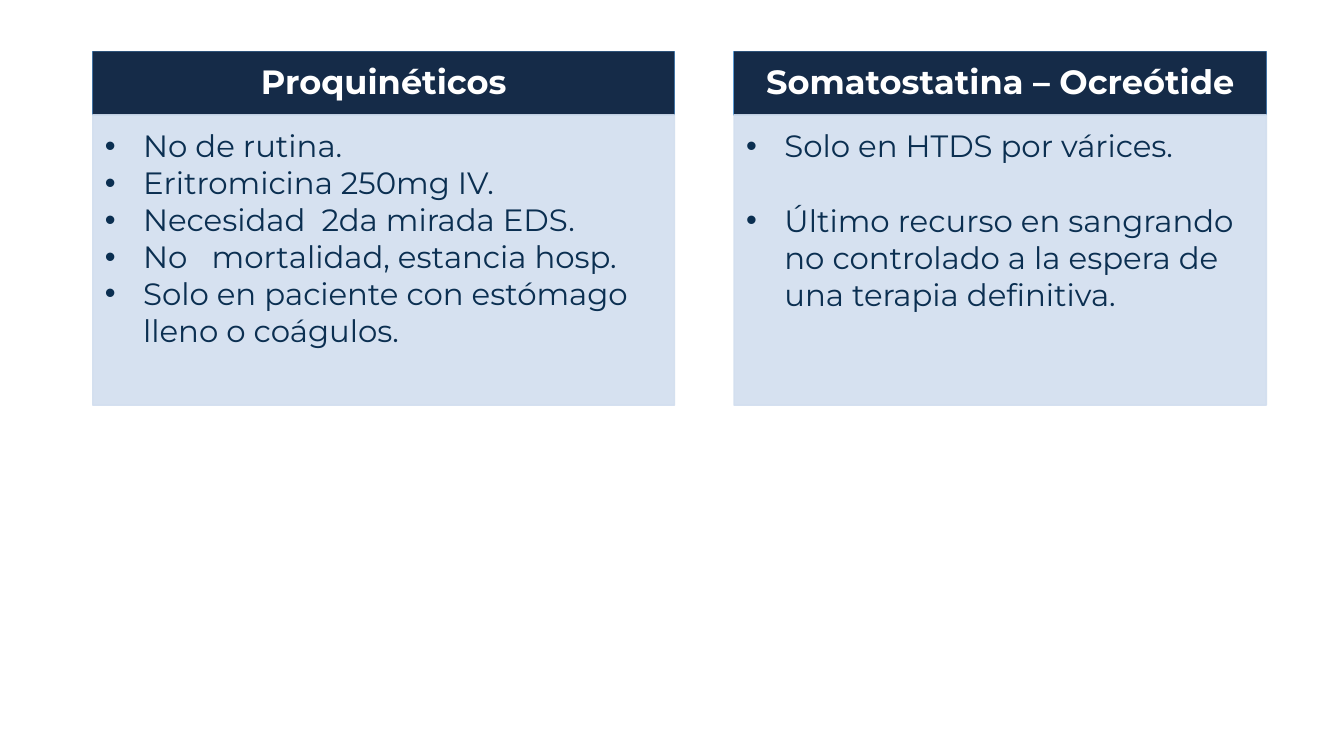
from dataclasses import dataclass

from lxml import etree
from pptx import Presentation
from pptx.dml.color import RGBColor
from pptx.enum import shapes, text
from pptx.oxml.ns import qn
from pptx.util import Inches, Pt


@dataclass(frozen=True)
class Theme:
    font: str = "Montserrat"
    navy: str = "152B48"
    edge: str = "5B9BD5"
    pale: str = "D2DEEF"
    ink: str = "0B2F51"
    white: str = "FFFFFF"
    title_size: int = 24
    body_size: int = 22
    pale_alpha: int = 90
    line_width: int = 1


THEME = Theme()

# Each bullet is a list of text pieces; a number between two pieces is the
# extra width, in points, of the space that joins them.
CARDS = [
    {
        "title": "Proquinéticos", "left": 0.92, "width": 5.77, "gap": 0,
        "bullets": [
            ["No de rutina."],
            ["Eritromicina 250mg IV."],
            ["Necesidad", 5.8, "2da mirada EDS."],
            ["No", 11.6, "mortalidad, estancia hosp."],
            ["Solo en paciente con estómago lleno o coágulos."],
        ],
    },
    {
        "title": "Somatostatina – Ocreótide", "left": 7.28, "width": 5.28, "gap": 26.8,
        "bullets": [
            ["Solo en HTDS por várices."],
            ["Último recurso en sangrando no controlado a la espera de "
             "una terapia definitiva."],
        ],
    },
]
TOP, HEADER_HEIGHT, BODY_HEIGHT = 0.51, 0.63, 2.88
HEADER_INSETS = (0.16, 0.09, 0.16, 0.09)
BODY_INSETS = (0.12, 0.12, 0.16, 0.17)
INDENT = 0.38


def add_rect(slide, box, fill, line=None, alpha=100):
    sp = slide.shapes.add_shape(shapes.MSO_SHAPE.RECTANGLE, *map(Inches, box))
    sp.shadow.inherit = False
    sp.fill.solid()
    sp.fill.fore_color.rgb = RGBColor.from_string(fill)
    if line:
        sp.line.color.rgb = RGBColor.from_string(line)
        sp.line.width = Pt(THEME.line_width)
    else:
        sp.line.fill.background()
    if alpha < 100:
        for color in sp._element.spPr.iter(qn("a:srgbClr")):
            etree.SubElement(color, qn("a:alpha"), val=str(alpha * 1000))
    return sp


def prepare_frame(sp, insets, anchor):
    tf = sp.text_frame
    tf.word_wrap = True
    tf.vertical_anchor = anchor
    tf.margin_left, tf.margin_top, tf.margin_right, tf.margin_bottom = map(Inches, insets)
    return tf


def add_run(p, words, size, color, bold=False):
    r = p.add_run()
    r.text = words
    r.font.name = THEME.font
    r.font.size = Pt(size)
    r.font.bold = bold
    r.font.color.rgb = RGBColor.from_string(color)
    return r


def set_bullet(p):
    pPr = p._p.get_or_add_pPr()
    pPr.set("marL", str(Inches(INDENT)))
    pPr.set("indent", str(-Inches(INDENT)))
    etree.SubElement(pPr, qn("a:buFont"), typeface="Arial")
    etree.SubElement(pPr, qn("a:buChar"), char="•")


def add_header(slide, card):
    box = (card["left"], TOP, card["width"], HEADER_HEIGHT)
    add_rect(slide, box, THEME.navy, THEME.edge)
    label = add_rect(slide, box, THEME.navy)
    p = prepare_frame(label, HEADER_INSETS, text.MSO_ANCHOR.MIDDLE).paragraphs[0]
    p.alignment = text.PP_ALIGN.CENTER
    p.line_spacing = 0.9
    add_run(p, card["title"], THEME.title_size, THEME.white, bold=True)


def add_body(slide, card):
    box = (card["left"], TOP + HEADER_HEIGHT, card["width"], BODY_HEIGHT)
    add_rect(slide, box, THEME.pale, THEME.pale, THEME.pale_alpha)
    sp = slide.shapes.add_textbox(*map(Inches, box))
    tf = prepare_frame(sp, BODY_INSETS, text.MSO_ANCHOR.TOP)
    for i, pieces in enumerate(card["bullets"]):
        p = tf.add_paragraph() if i else tf.paragraphs[0]
        set_bullet(p)
        if i and card["gap"]:
            p.space_before = Pt(card["gap"])
        for piece in pieces:
            if isinstance(piece, str):
                add_run(p, piece, THEME.body_size, THEME.ink)
            else:
                r = add_run(p, " ", THEME.body_size, THEME.ink)
                r.font._element.set("spc", str(round(piece * 100)))


def main():
    prs = Presentation()
    prs.slide_width, prs.slide_height = Inches(13.33), Inches(7.5)
    slide = prs.slides.add_slide(prs.slide_layouts[6])
    for card in CARDS:
        add_header(slide, card)
        add_body(slide, card)
    prs.save("out.pptx")


if __name__ == "__main__":
    main()
